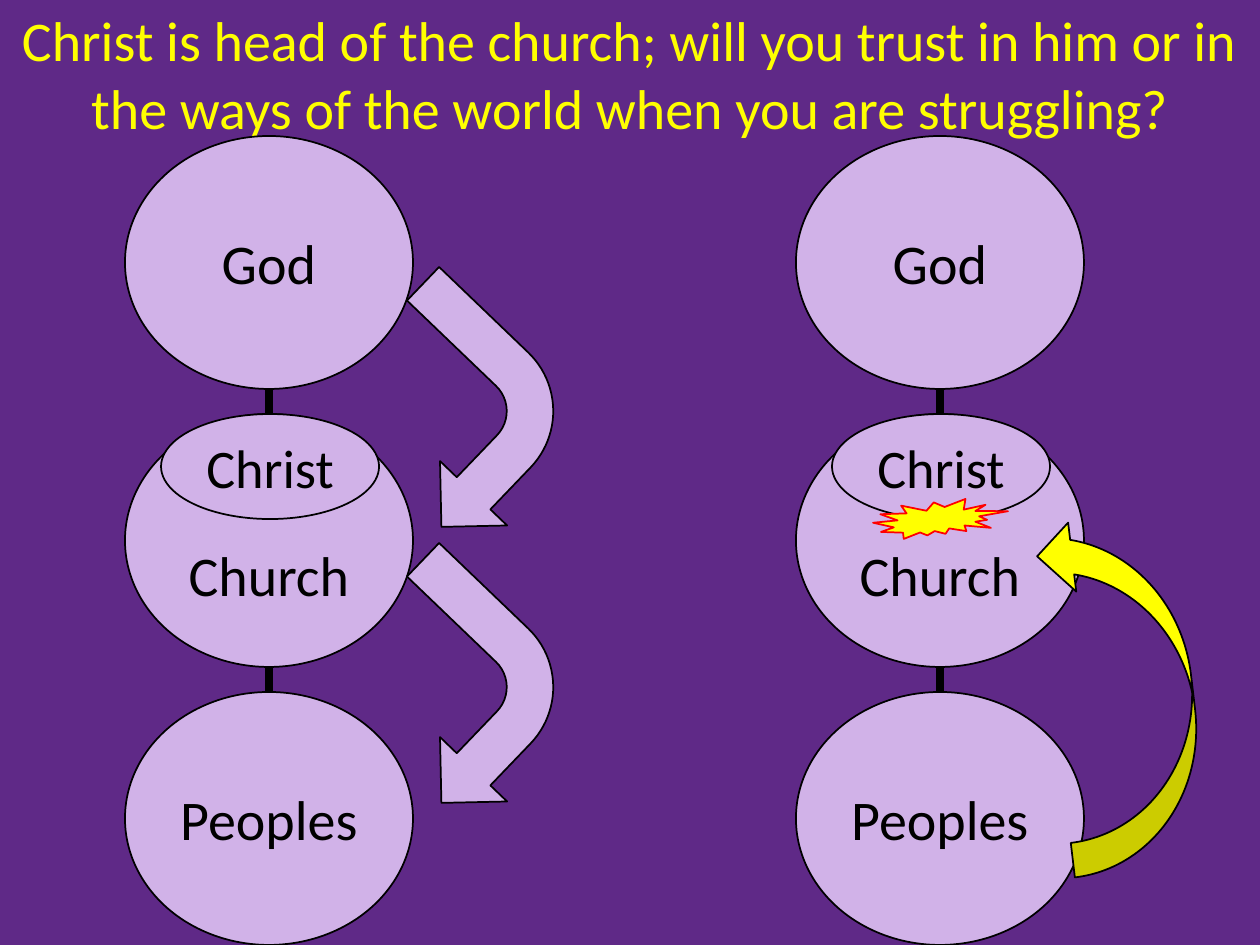
import pptx
import pptx.util
import pptx.dml.color
import pptx.enum.shapes
import pptx.enum.text
import pptx.oxml.ns
import lxml.etree

EMU_PER_PX = 914400 / 126
SHAPE = pptx.enum.shapes.MSO_SHAPE


def px(length):
    return pptx.util.Emu(round(length * EMU_PER_PX))


def rgb(code):
    return pptx.dml.color.RGBColor.from_string(code)


def write(holder, text, size=32, color="000000", font="Calibri", anchor="MIDDLE", top_inset=6):
    frame = holder.text_frame
    frame.word_wrap = True
    frame.margin_top = px(top_inset)
    frame.vertical_anchor = getattr(pptx.enum.text.MSO_ANCHOR, anchor)
    paragraph = frame.paragraphs[0]
    paragraph.alignment = pptx.enum.text.PP_ALIGN.CENTER
    run = paragraph.add_run()
    run.text = text
    run.font.name = font
    run.font.size = pptx.util.Pt(size)
    run.font.color.rgb = rgb(color)


class Board:
    purple, lilac, yellow, black, red = "5F2987", "D1B2E8", "FFFF00", "000000", "FF0000"

    def __init__(self, slide):
        self.slide = slide
        self.layer = slide.shapes
        slide.background.fill.solid()
        slide.background.fill.fore_color.rgb = rgb(self.purple)

    def start_group(self):
        self.layer = self.slide.shapes.add_group_shape().shapes

    def end_group(self):
        self.layer = self.slide.shapes

    def title(self, text, left, top, width, height):
        heading = self.layer.add_textbox(px(left), px(top), px(width), px(height))
        write(heading, text, color=self.yellow, anchor="TOP")

    def figure(self, preset, left, top, width, height, fill=lilac, line=black, rotation=0):
        figure = self.layer.add_shape(preset, px(left), px(top), px(width), px(height))
        figure.shadow.inherit = False
        figure.fill.solid()
        figure.fill.fore_color.rgb = rgb(fill)
        figure.line.color.rgb = rgb(line)
        figure.line.width = pptx.util.Pt(1)
        figure.rotation = rotation
        return figure

    def oval(self, text, left, top, width, height, **text_format):
        write(self.figure(SHAPE.OVAL, left, top, width, height), text, **text_format)

    def link(self, x, top, bottom):
        link = self.layer.add_connector(
            pptx.enum.shapes.MSO_CONNECTOR.STRAIGHT, px(x), px(top), px(x), px(bottom))
        link.line.color.rgb = rgb(self.black)
        link.line.width = pptx.util.Pt(5)
        lxml.etree.SubElement(link.element.spPr, pptx.oxml.ns.qn("a:effectLst"))

    def chain(self, left):
        width, height, step, first_top = 288, 253, 278, 136
        god_top, church_top, peoples_top = [first_top + step * level for level in range(3)]
        self.oval("Peoples", left, peoples_top, width, height)
        self.oval("Church", left, church_top, width, height, top_inset=74)
        self.oval("God", left, god_top, width, height)
        self.oval("Christ", left + 36, church_top, 218, 105, size=31)
        for upper_top in (god_top, church_top):
            self.link(left + width // 2, upper_top + height, upper_top + step)


def main():
    deck = pptx.Presentation()
    deck.slide_width, deck.slide_height = px(1260), px(945)
    board = Board(deck.slides.add_slide(deck.slide_layouts[6]))

    board.title("Christ is head of the church; will you trust in him or in "
                "the ways of the world when you are struggling?", 0, 0, 1260, 149)

    board.start_group()
    board.chain(125)
    for arrow_top in (299, 575):
        board.figure(SHAPE.BENT_ARROW, 364, arrow_top, 186, 228, rotation=133.8)

    board.start_group()
    board.chain(796)
    board.figure(SHAPE.CURVED_UP_ARROW, 944, 622, 358, 139, fill=board.yellow, rotation=263.3)

    board.end_group()
    board.figure(SHAPE.EXPLOSION2, 873, 499, 135, 40, fill=board.yellow, line=board.red)

    deck.save("out.pptx")


if __name__ == "__main__":
    main()
